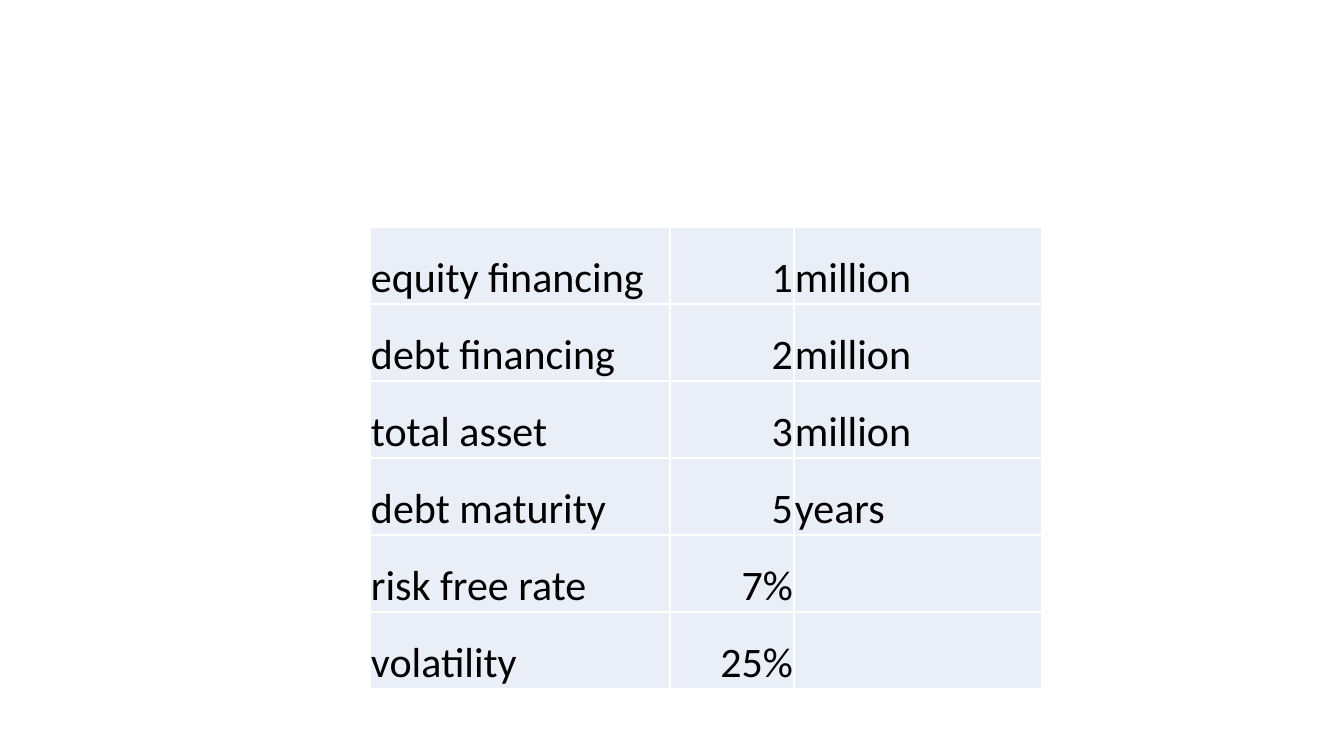
from dataclasses import dataclass

from lxml.etree import SubElement
from pptx import Presentation
from pptx.dml.color import RGBColor
from pptx.enum.text import MSO_ANCHOR as Anchor, PP_ALIGN as Align
from pptx.oxml.ns import qn
from pptx.util import Pt

# Content
ASSUMPTIONS = [
    ("equity financing", "1", "million"),
    ("debt financing", "2", "million"),
    ("total asset", "3", "million"),
    ("debt maturity", "5", "years"),
    ("risk free rate", "7%", ""),
    ("volatility", "25%", ""),
]
ALIGNMENTS = (Align.LEFT, Align.RIGHT, Align.LEFT)

# Layout in px
SLIDE_SIZE = (1344, 756)
TABLE_LEFT, TABLE_TOP = 370, 227
COLUMN_WIDTHS = (300, 124, 248)
ROW_HEIGHT = 77
CELL_INSET = 1


@dataclass(frozen=True)
class Theme:
    font: str = "Calibri"
    text_size: int = 30
    text: str = "000000"
    cell: str = "EAEFF7"
    border: str = "FFFFFF"
    border_width: int = 1


THEME = Theme()


def px(length):
    return round(length * 914400 / 100.8)


def add_borders(cell):
    properties = cell._tc.get_or_add_tcPr()
    for side in ("a:lnL", "a:lnR", "a:lnT", "a:lnB"):
        line = SubElement(properties, qn(side), w=str(Pt(THEME.border_width)))
        SubElement(SubElement(line, qn("a:solidFill")), qn("a:srgbClr"), val=THEME.border)


def fill_cell(cell, wording, alignment):
    add_borders(cell)
    cell.fill.solid()
    cell.fill.fore_color.rgb = RGBColor.from_string(THEME.cell)
    cell.margin_left = cell.margin_right = cell.margin_top = px(CELL_INSET)
    cell.margin_bottom = 0
    cell.vertical_anchor = Anchor.BOTTOM
    cell.text = wording
    paragraph = cell.text_frame.paragraphs[0]
    paragraph.alignment = alignment
    paragraph.font.name = THEME.font
    paragraph.font.size = Pt(THEME.text_size)
    paragraph.font.color.rgb = RGBColor.from_string(THEME.text)


def main():
    deck = Presentation()
    deck.slide_width, deck.slide_height = map(px, SLIDE_SIZE)
    slide = deck.slides.add_slide(deck.slide_layouts[6])

    # Table of assumptions
    assumptions = slide.shapes.add_table(
        len(ASSUMPTIONS), len(COLUMN_WIDTHS), px(TABLE_LEFT), px(TABLE_TOP),
        px(sum(COLUMN_WIDTHS)), px(ROW_HEIGHT * len(ASSUMPTIONS))).table
    assumptions.first_row = assumptions.horz_banding = False
    for column, width in zip(assumptions.columns, COLUMN_WIDTHS):
        column.width = px(width)
    for row, wordings in zip(assumptions.rows, ASSUMPTIONS):
        row.height = px(ROW_HEIGHT)
        for cell, wording, alignment in zip(row.cells, wordings, ALIGNMENTS):
            fill_cell(cell, wording, alignment)

    deck.save("out.pptx")


if __name__ == "__main__":
    main()
